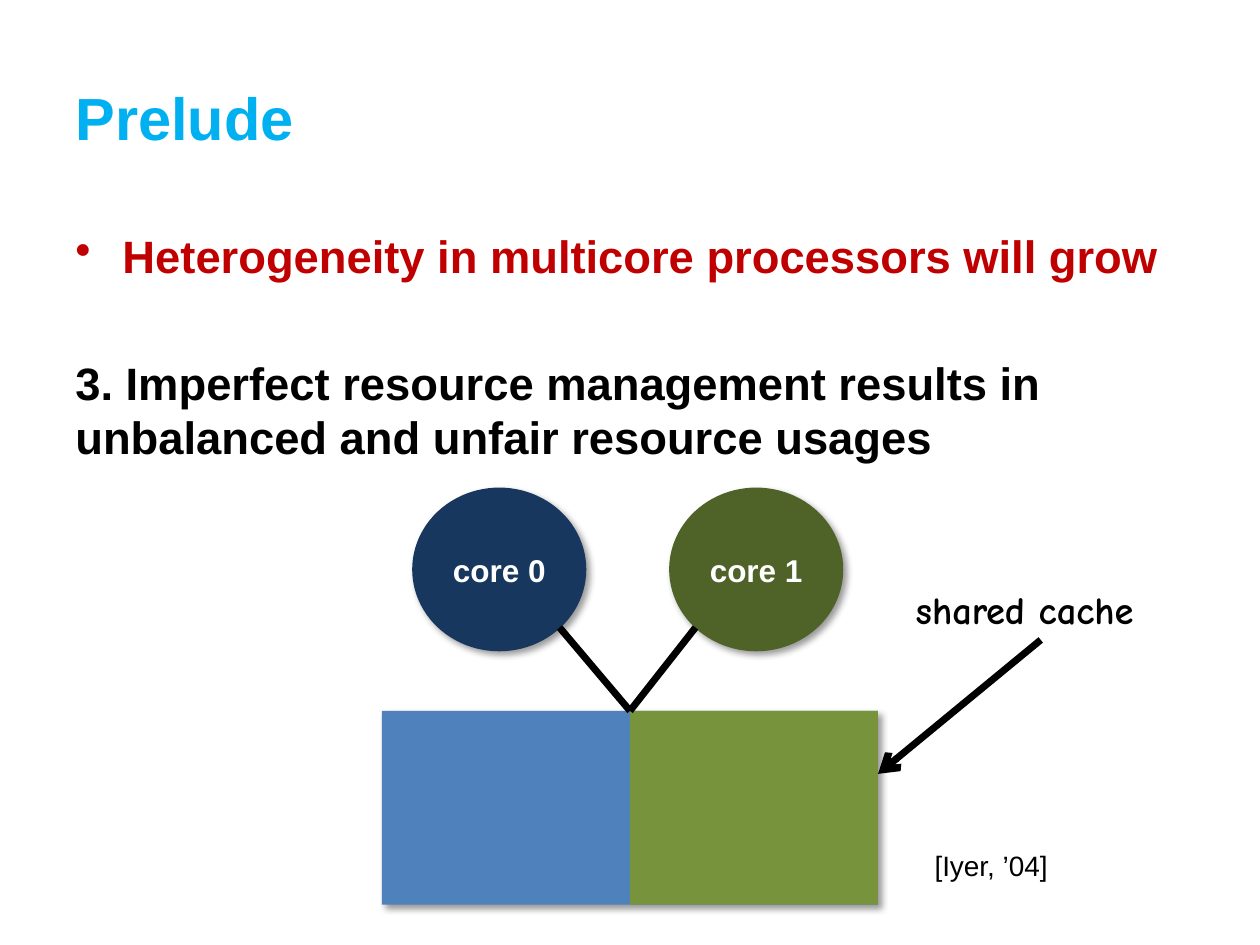
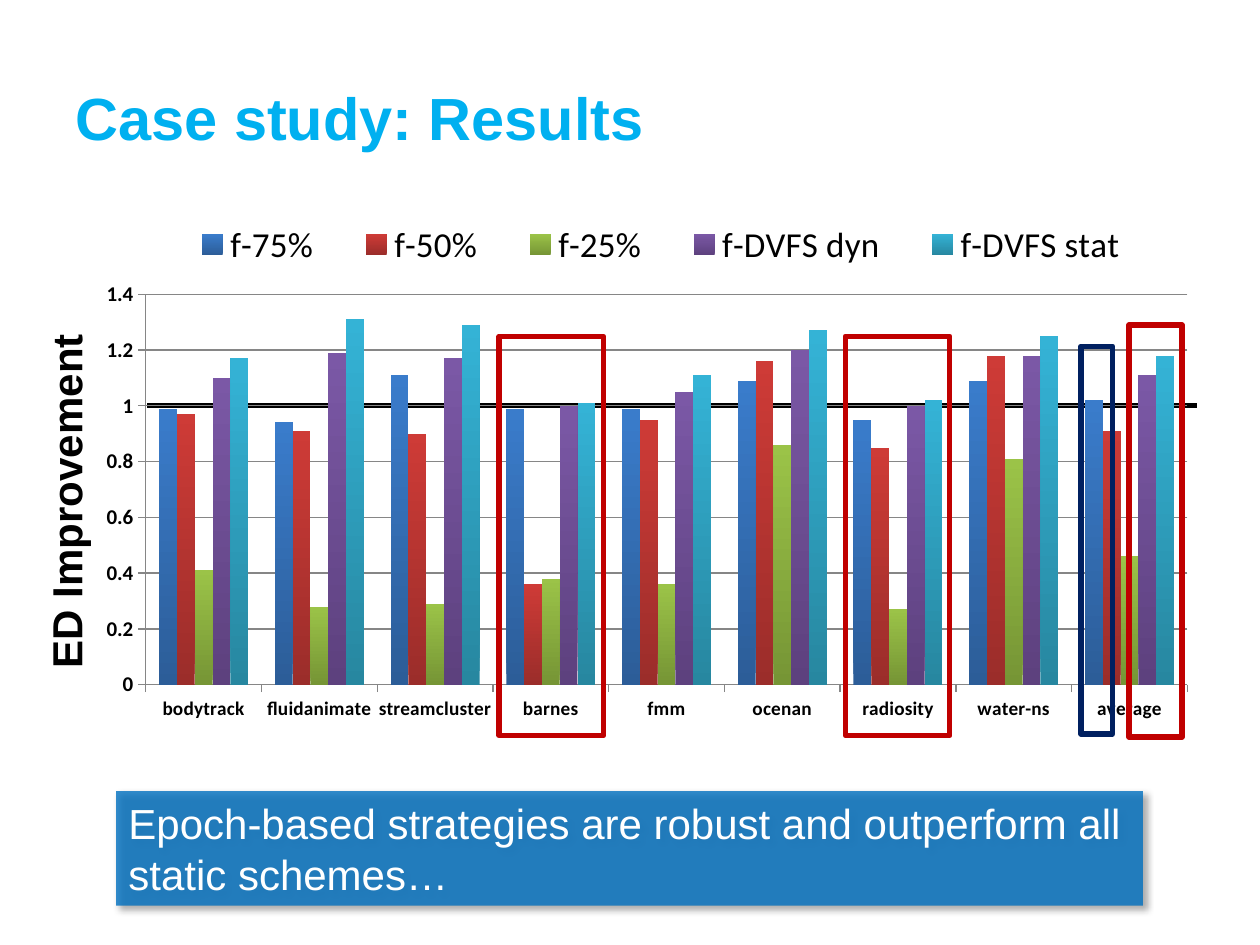
from lxml import etree
from pptx import Presentation
from pptx import util as u
from pptx.chart.data import CategoryChartData
from pptx.dml.color import RGBColor
from pptx.enum import chart as charts, shapes, text
from pptx.oxml import parse_xml
from pptx.oxml.ns import nsdecls, qn

BLACK = RGBColor(0x00, 0x00, 0x00)
WHITE = RGBColor(0xFF, 0xFF, 0xFF)
GREY = RGBColor(0x86, 0x86, 0x86)
SKY = RGBColor(0x00, 0xB0, 0xF0)
RED = RGBColor(0xC0, 0x00, 0x00)
NAVY = RGBColor(0x00, 0x20, 0x60)
BANNER_BLUE = RGBColor(0x00, 0x70, 0xC0)
CORE_BLUE = RGBColor(0x17, 0x37, 0x5E)
CORE_GREEN = RGBColor(0x4F, 0x62, 0x28)
CACHE_BLUE = RGBColor(0x4F, 0x81, 0xBD)
CACHE_GREEN = RGBColor(0x77, 0x93, 0x3C)
BAR_GRADIENTS = [
    (RGBColor(0x2C, 0x5D, 0x98), RGBColor(0x3A, 0x7C, 0xCB)),
    (RGBColor(0x9B, 0x2D, 0x2A), RGBColor(0xCE, 0x3B, 0x37)),
    (RGBColor(0x76, 0x95, 0x35), RGBColor(0x9B, 0xC3, 0x48)),
    (RGBColor(0x5D, 0x41, 0x7E), RGBColor(0x7B, 0x58, 0xA6)),
    (RGBColor(0x27, 0x87, 0xA0), RGBColor(0x34, 0xB3, 0xD6)),
]
SHADOW = (
    f'<a:effectLst {nsdecls("a")}><a:outerShdw blurRad="50800" dist="38100" dir="2700000">'
    '<a:srgbClr val="000000"><a:alpha val="40000"/></a:srgbClr></a:outerShdw></a:effectLst>'
)

PROGRAMS = ["bodytrack", "fluidanimate", "streamcluster", "barnes", "fmm",
            "ocenan", "radiosity", "water-ns", "average"]
IMPROVEMENT = {
    "f-75%": [0.99, 0.94, 1.11, 0.99, 0.99, 1.09, 0.95, 1.09, 1.02],
    "f-50%": [0.97, 0.91, 0.9, 0.36, 0.95, 1.16, 0.85, 1.18, 0.91],
    "f-25%": [0.41, 0.28, 0.29, 0.38, 0.36, 0.86, 0.27, 0.81, 0.46],
    "f-DVFS dyn": [1.1, 1.19, 1.17, 1, 1.05, 1.2, 1, 1.18, 1.11],
    "f-DVFS stat": [1.17, 1.31, 1.29, 1.01, 1.11, 1.27, 1.02, 1.25, 1.18],
}


def lengths(*values):
    return [u.Cm(value) for value in values]


def set_font(font, size, color=BLACK, bold=False, name="Arial"):
    font.name, font.size, font.bold = name, u.Pt(size), bold
    font.color.rgb = color


def manual_layout(x, y, width, height, inner=False):
    target = '<c:layoutTarget val="inner"/>' if inner else ""
    return parse_xml(
        f'<c:layout {nsdecls("c")}><c:manualLayout>{target}'
        '<c:xMode val="edge"/><c:yMode val="edge"/>'
        f'<c:x val="{x}"/><c:y val="{y}"/><c:w val="{width}"/><c:h val="{height}"/>'
        "</c:manualLayout></c:layout>")


class Deck:
    def __init__(self):
        self.presentation = Presentation()
        self.presentation.slide_width, self.presentation.slide_height = lengths(25.4, 19.05)
        self.slide = None

    def add_slide(self, title):
        self.slide = self.presentation.slides.add_slide(self.presentation.slide_layouts[5])
        shape = self.slide.shapes.title
        shape.left, shape.top, shape.width, shape.height = lengths(1.27, 0.76, 22.86, 3.18)
        shape.text_frame.text = title
        shape.text_frame.vertical_anchor = text.MSO_ANCHOR.MIDDLE
        paragraph = shape.text_frame.paragraphs[0]
        paragraph.alignment = text.PP_ALIGN.LEFT
        set_font(paragraph.font, 34, SKY, True)

    def textbox(self, box, content, size, color=BLACK, bold=False, name="Arial", wrap=False):
        frame = self.slide.shapes.add_textbox(*lengths(*box)).text_frame
        frame.word_wrap = wrap
        frame.text = content
        for paragraph in frame.paragraphs:
            set_font(paragraph.font, size, color, bold, name)
        return frame

    def shape(self, box, fill=None, outline=None, shadow=False, ellipse=False):
        kind = shapes.MSO_SHAPE.OVAL if ellipse else shapes.MSO_SHAPE.RECTANGLE
        shape = self.slide.shapes.add_shape(kind, *lengths(*box))
        shape.shadow.inherit = False
        if fill is None:
            shape.fill.background()
        else:
            shape.fill.solid()
            shape.fill.fore_color.rgb = fill
        if outline is None:
            shape.line.fill.background()
        else:
            shape.line.color.rgb = outline
            shape.line.width = u.Pt(3)
        if shadow:
            properties = shape._element.spPr
            properties.replace(properties.find(qn("a:effectLst")), parse_xml(SHADOW))
        return shape

    def label(self, shape, content, size, bold=False, alignment=text.PP_ALIGN.CENTER):
        shape.text_frame.text = content
        paragraph = shape.text_frame.paragraphs[0]
        paragraph.alignment = alignment
        set_font(paragraph.font, size, WHITE, bold)
        return paragraph

    def line(self, start, end, width, arrow=False):
        connector = self.slide.shapes.add_connector(
            shapes.MSO_CONNECTOR.STRAIGHT, *lengths(*start, *end))
        connector.line.color.rgb = BLACK
        connector.line.width = u.Pt(width)
        if arrow:
            etree.SubElement(connector.line._get_or_add_ln(), qn("a:tailEnd"), type="arrow")
        etree.SubElement(connector._element.spPr, qn("a:effectLst"))

    def column_chart(self, box, categories, values, axis_title):
        data = CategoryChartData()
        data.categories = categories
        for name, series_values in values.items():
            data.add_series(name, series_values)
        chart = self.slide.shapes.add_chart(
            charts.XL_CHART_TYPE.COLUMN_CLUSTERED, *lengths(*box), data).chart
        set_font(chart.font, 10, name="Calibri")
        chart.has_title = False
        chart.has_legend = True
        chart.legend.position = charts.XL_LEGEND_POSITION.TOP
        chart.legend.include_in_layout = False
        set_font(chart.legend.font, 20, name="Calibri")
        position = chart.legend._element.find(qn("c:legendPos"))
        for old in chart.legend._element.findall(qn("c:layout")):
            chart.legend._element.remove(old)
        position.addnext(manual_layout(0.11, 0.05, 0.85, 0.1))

        plot = chart.plots[0]
        plot.gap_width, plot.overlap, plot.vary_by_categories = 150, 0, False
        for series, stop_colors in zip(plot.series, BAR_GRADIENTS):
            series.invert_if_negative = False
            fill = series.format.fill
            fill.gradient()
            fill.gradient_angle = 90
            for stop, color in zip(fill.gradient_stops, stop_colors):
                stop.color.rgb = color
        plot_area = chart._chartSpace.chart.plotArea
        for old in plot_area.findall(qn("c:layout")):
            plot_area.remove(old)
        plot_area.insert(0, manual_layout(0.097, 0.189, 0.886, 0.701, inner=True))

        for axis, size in ((chart.category_axis, 11), (chart.value_axis, 12)):
            set_font(axis.tick_labels.font, size, bold=True, name="Calibri")
            axis.major_tick_mark = charts.XL_TICK_MARK.OUTSIDE
            axis.format.line.color.rgb = GREY
        axis = chart.value_axis
        axis.minimum_scale, axis.maximum_scale, axis.major_unit = 0, 1.4, 0.2
        axis.tick_labels.number_format = "General"
        axis.tick_labels.number_format_is_linked = False
        axis.has_major_gridlines = True
        axis.major_gridlines.format.line.color.rgb = GREY
        axis.axis_title.text_frame.text = axis_title
        set_font(axis.axis_title.text_frame.paragraphs[0].runs[0].font, 24, bold=True)


def build_prelude(deck):
    deck.add_slide("Prelude")
    frame = deck.textbox(
        (1.27, 4.48, 22.86, 5.08),
        "Heterogeneity in multicore processors will grow\n"
        "3. Imperfect resource management results in unbalanced and unfair resource usages",
        25.9, bold=True, wrap=True)
    trend, problem = frame.paragraphs
    trend.font.color.rgb = RED
    trend.line_spacing = problem.line_spacing = u.Pt(30.9)
    problem.space_before = u.Pt(41.7)
    properties = trend._p.get_or_add_pPr()
    properties.set("marL", str(u.Cm(0.95)))
    properties.set("indent", str(-u.Cm(0.95)))
    bullet = parse_xml(f'<a:buChar {nsdecls("a")} char="•"/>')
    properties.find(qn("a:defRPr")).addprevious(bullet)

    for number, (left, color) in enumerate(((8.31, CORE_BLUE), (13.49, CORE_GREEN))):
        core = deck.shape((left, 9.83, 3.51, 3.3), color, shadow=True, ellipse=True)
        deck.label(core, f"core {number}", 18, bold=True)
    deck.shape((7.7, 14.33, 10, 3.91), CACHE_BLUE, shadow=True)
    deck.shape((12.7, 14.33, 5, 3.91), CACHE_GREEN)
    for core_x in (11.28, 14.02):
        deck.line((core_x, 12.65), (12.7, 14.33), 4)
    deck.textbox((18.59, 16.99, 2.84, 0.94), "[Iyer, ’04]", 16)
    deck.textbox((18.21, 11.68, 5.54, 1.19), "shared cache", 22, bold=True, name="Comic Neue")
    deck.line((20.98, 12.9), (17.7, 15.6), 4, arrow=True)


def build_results(deck):
    deck.add_slide("Case study: Results")
    deck.line((2.97, 8.18), (24.13, 8.18), 2.75)
    deck.column_chart((0.64, 3.81, 23.7, 11.23), PROGRAMS, IMPROVEMENT, "ED Improvement")
    deck.shape((22.76, 6.55, 1.07, 8.31), outline=RED)
    deck.shape((21.79, 6.98, 0.64, 7.82), outline=NAVY)
    for left in (10.06, 17.04):
        deck.shape((left, 6.78, 2.11, 8.05), outline=RED)
    banner = deck.shape((2.34, 15.95, 20.7, 2.31), BANNER_BLUE, shadow=True)
    color = banner._element.spPr.find(qn("a:solidFill"))[0]
    etree.SubElement(color, qn("a:alpha"), val="80000")
    banner.text_frame.vertical_anchor = text.MSO_ANCHOR.TOP
    message = deck.label(
        banner, "Epoch-based strategies are robust and outperform all static schemes…",
        24, alignment=text.PP_ALIGN.LEFT)
    message.line_spacing = u.Pt(29.1)


def main():
    deck = Deck()
    build_prelude(deck)
    build_results(deck)
    deck.presentation.save("out.pptx")


if __name__ == "__main__":
    main()
